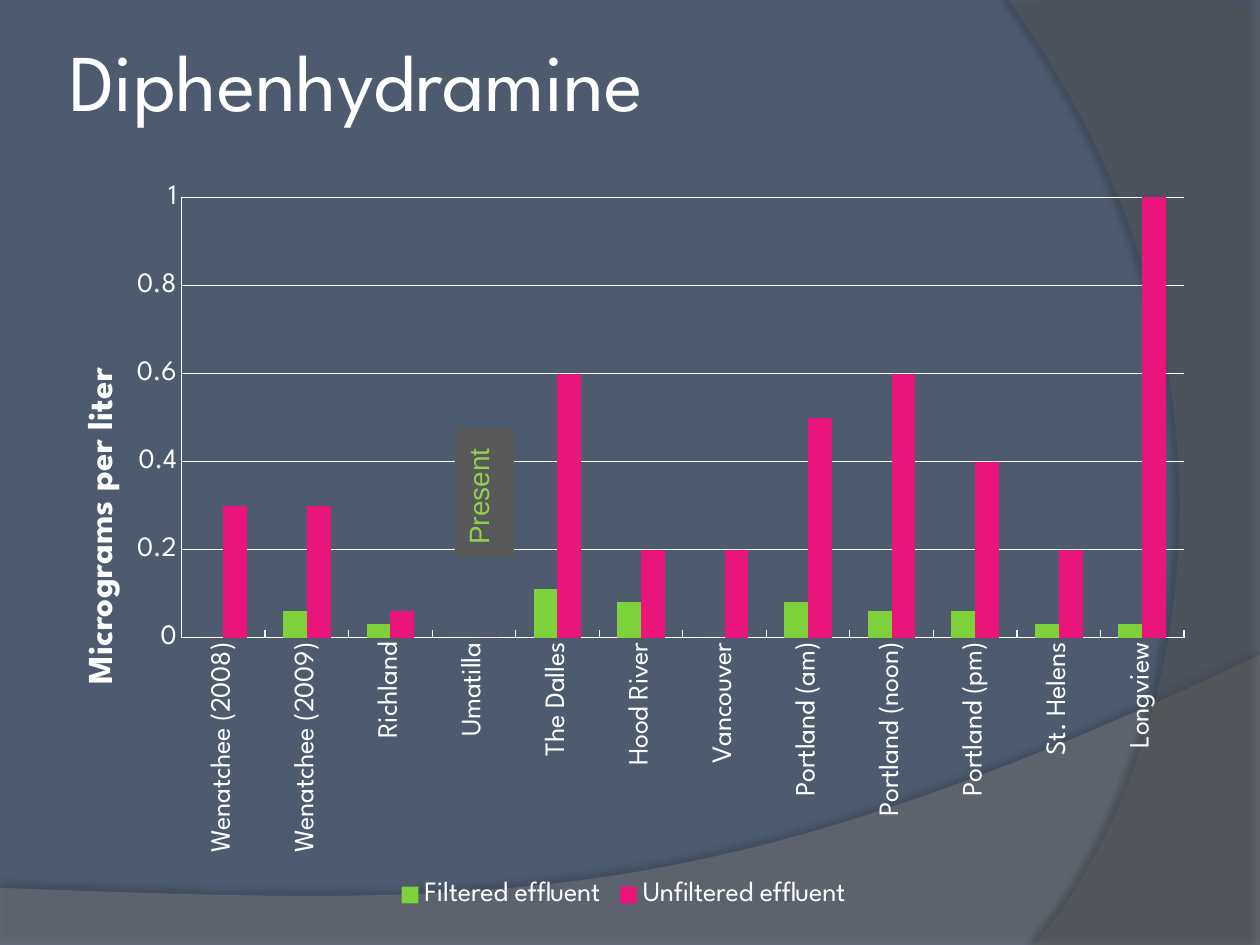
import pptx
import pptx.chart.data
import pptx.dml.color
import pptx.enum.chart
import pptx.enum.shapes
import pptx.enum.text
import pptx.oxml
import pptx.oxml.ns
import pptx.util
from dataclasses import dataclass
from lxml import etree

Cm = pptx.util.Cm
Pt = pptx.util.Pt
qn = pptx.oxml.ns.qn


@dataclass(frozen=True)
class Theme:
    background: str = "4E5B6F"
    text: str = "FFFFFF"
    filtered: str = "7FD13B"
    unfiltered: str = "EA157A"
    note_fill: str = "595959"
    note_text: str = "92D050"
    wave: str = "7F7F7F"
    arc: str = "5E5E5E"
    shadow: str = "000000"
    font: str = "League Spartan"
    note_font: str = "Arial"
    title_size: int = 46
    axis_title_size: int = 20
    body_size: int = 16


THEME = Theme()
SITES = ["Wenatchee (2008)", "Wenatchee (2009)", "Richland", "Umatilla",
         "The Dalles", "Hood River", "Vancouver", "Portland (am)",
         "Portland (noon)", "Portland (pm)", "St. Helens", "Longview"]
SERIES = [
    ("Filtered effluent", THEME.filtered,
     [0, 0.06, 0.03, 0, 0.11, 0.08, 0, 0.08, 0.06, 0.06, 0.03, 0.03]),
    ("Unfiltered effluent", THEME.unfiltered,
     [0.3, 0.3, 0.06, 0, 0.6, 0.2, 0.2, 0.5, 0.6, 0.4, 0.2, 1]),
]


def rgb(value):
    return pptx.dml.color.RGBColor.from_string(value)


def set_all(target, values):
    for name, value in values.items():
        setattr(target, name, value)


def paint(fill, color):
    fill.solid()
    fill.fore_color.rgb = rgb(color)


def style_font(font, size, color=THEME.text, name=THEME.font, bold=False):
    set_all(font, {"size": Pt(size), "name": name, "bold": bold})
    font.color.rgb = rgb(color)


def place(item, box):
    set_all(item, dict(zip(("left", "top", "width", "height"), map(Cm, box))))


def bezier(points, steps=48):
    """Points along a cubic curve, without its start."""
    for step in range(1, steps + 1):
        t = step / steps
        weights = ((1 - t) ** 3, 3 * t * (1 - t) ** 2, 3 * t * t * (1 - t), t ** 3)
        yield tuple(sum(w * p[axis] for w, p in zip(weights, points))
                    for axis in (0, 1))


def add_swoosh(page, box, corners, curve, color, opacity, shadow):
    """Translucent panel: straight corners, then one curve from the last corner."""
    left, top = box[:2]
    outline = corners + list(bezier([corners[-1]] + curve))
    points = [(Cm(left + x), Cm(top + y)) for x, y in outline]
    builder = page.shapes.build_freeform(*points[0])
    builder.add_line_segments(points[1:], close=True)
    panel = builder.convert_to_shape()
    paint(panel.fill, color)
    panel.line.fill.background()
    panel.shadow.inherit = False
    properties = panel._element.spPr
    tint = properties.find(qn("a:solidFill"))[0]
    etree.SubElement(tint, qn("a:alpha"), val=str(opacity * 1000))

    # Soft shadow
    strength, blur, distance, angle = shadow
    effect = etree.SubElement(
        properties.find(qn("a:effectLst")), qn("a:outerShdw"),
        blurRad=str(Pt(blur)), dist=str(Pt(distance)),
        dir=str(angle * 60000), rotWithShape="0")
    shade = etree.SubElement(effect, qn("a:srgbClr"), val=THEME.shadow)
    etree.SubElement(shade, qn("a:alpha"), val=str(strength * 1000))
    return panel


def add_backdrop(page):
    paint(page.background.fill, THEME.background)
    wave = add_swoosh(
        page, (0, 13.2), [(0, 4.7), (0, 5.87), (25.4, 5.87), (25.4, 0)],
        [(14.2, 5.31), (9.93, 5.05), (0, 4.7)],
        THEME.wave, 45, (35, 4, 3.5, 270))
    arc = add_swoosh(
        page, (20.32, 0), [(5.08, 0.05), (5.08, 19.05), (0.53, 19.05)],
        [(3.43, 15.72), (5.54, 7.62), (0, 0)],
        THEME.arc, 40, (45, 4, 4, 180))
    # Both panels lie behind the title
    tree = page.shapes._spTree
    for panel in (arc, wave):
        tree.insert(2, panel._element)


def fill_title(page, box, text):
    title = page.shapes.title
    place(title, box)
    frame = title.text_frame
    margins = ("margin_left", "margin_top", "margin_right", "margin_bottom")
    set_all(frame, dict.fromkeys(margins, Cm(0.13)))
    set_all(frame, {"vertical_anchor": pptx.enum.text.MSO_ANCHOR.MIDDLE,
                    "word_wrap": True})
    para = frame.paragraphs[0]
    para.alignment = pptx.enum.text.PP_ALIGN.LEFT
    span = para.add_run()
    span.text = text
    style_font(span.font, THEME.title_size)


def set_layout(element, before, **fractions):
    """Fix a chart part's place, in fractions of the chart."""
    for old in element.findall(qn("c:layout")):
        element.remove(old)
    layout = etree.Element(qn("c:layout"))
    manual = etree.SubElement(layout, qn("c:manualLayout"))
    if "w" in fractions:
        etree.SubElement(manual, qn("c:layoutTarget"), val="inner")
    for mode in ("xMode", "yMode"):
        etree.SubElement(manual, qn("c:" + mode), val="edge")
    for name, value in fractions.items():
        etree.SubElement(manual, qn("c:" + name), val=str(value))
    element.insert(before, layout)


def add_effluent_chart(page, box):
    data = pptx.chart.data.CategoryChartData()
    data.categories = SITES
    for name, _, values in SERIES:
        data.add_series(name, values)
    kinds = pptx.enum.chart
    chart = page.shapes.add_chart(
        kinds.XL_CHART_TYPE.COLUMN_CLUSTERED, *map(Cm, box), data).chart
    style_font(chart.font, THEME.body_size)
    set_all(chart, {"has_title": False, "has_legend": True})
    set_all(chart.legend, {"position": kinds.XL_LEGEND_POSITION.BOTTOM,
                           "include_in_layout": False})
    style_font(chart.legend.font, THEME.body_size)

    # Columns
    plot = chart.plots[0]
    set_all(plot, {"gap_width": 150, "overlap": 0, "vary_by_categories": False})
    for series, (_, color, _) in zip(plot.series, SERIES):
        paint(series.format.fill, color)

    # Axes
    scale, sites = chart.value_axis, chart.category_axis
    set_all(scale, {"minimum_scale": 0, "maximum_scale": 1, "major_unit": 0.2,
                    "has_major_gridlines": True})
    for axis in (scale, sites):
        axis.major_tick_mark = kinds.XL_TICK_MARK.INSIDE
        style_font(axis.tick_labels.font, THEME.body_size)
    for line in (scale.format.line, sites.format.line,
                 scale.major_gridlines.format.line):
        paint(line.fill, THEME.text)
        line.width = Pt(0.75)
    set_all(scale.tick_labels, {"number_format": "General",
                                "number_format_is_linked": False})
    labels = sites._element.find(qn("c:txPr")).find(qn("a:bodyPr"))
    labels.set("rot", "-5400000")
    labels.set("vert", "horz")

    # Axis title
    heading = scale.axis_title
    span = heading.text_frame.paragraphs[0].add_run()
    span.text = "Micrograms per liter"
    style_font(span.font, THEME.axis_title_size, bold=True)
    direction = heading._element.find(".//" + qn("a:bodyPr"))
    direction.set("rot", "-5400000")
    direction.set("vert", "horz")
    set_layout(heading._element, 1, x=0.03, y=0.26)
    set_layout(chart._chartSpace.find(".//" + qn("c:plotArea")), 0,
               x=0.12, y=0.04, w=0.86, h=0.59)


def add_note(page, box, text):
    note = page.shapes.add_shape(
        pptx.enum.shapes.MSO_SHAPE.RECTANGLE, *map(Cm, box))
    note.shadow.inherit = False
    paint(note.fill, THEME.note_fill)
    note.line.fill.background()
    frame = note.text_frame
    set_all(frame, {"word_wrap": False,
                    "vertical_anchor": pptx.enum.text.MSO_ANCHOR.TOP})
    frame._txBody.bodyPr.set("vert", "vert270")
    para = frame.paragraphs[0]
    para.alignment = pptx.enum.text.PP_ALIGN.LEFT
    span = para.add_run()
    span.text = text
    style_font(span.font, THEME.body_size, THEME.note_text, THEME.note_font)


def main():
    deck = pptx.Presentation()
    set_all(deck, {"slide_width": Cm(25.4), "slide_height": Cm(19.05)})
    page = deck.slides.add_slide(deck.slide_layouts[5])
    add_backdrop(page)
    fill_title(page, (1.27, 0, 20.75, 3.18), "Diphenhydramine")
    add_effluent_chart(page, (0.84, 3.38, 23.5, 15.04))
    add_note(page, (9.17, 8.64, 1.19, 2.59), "Present")
    deck.save("out.pptx")


if __name__ == "__main__":
    main()
